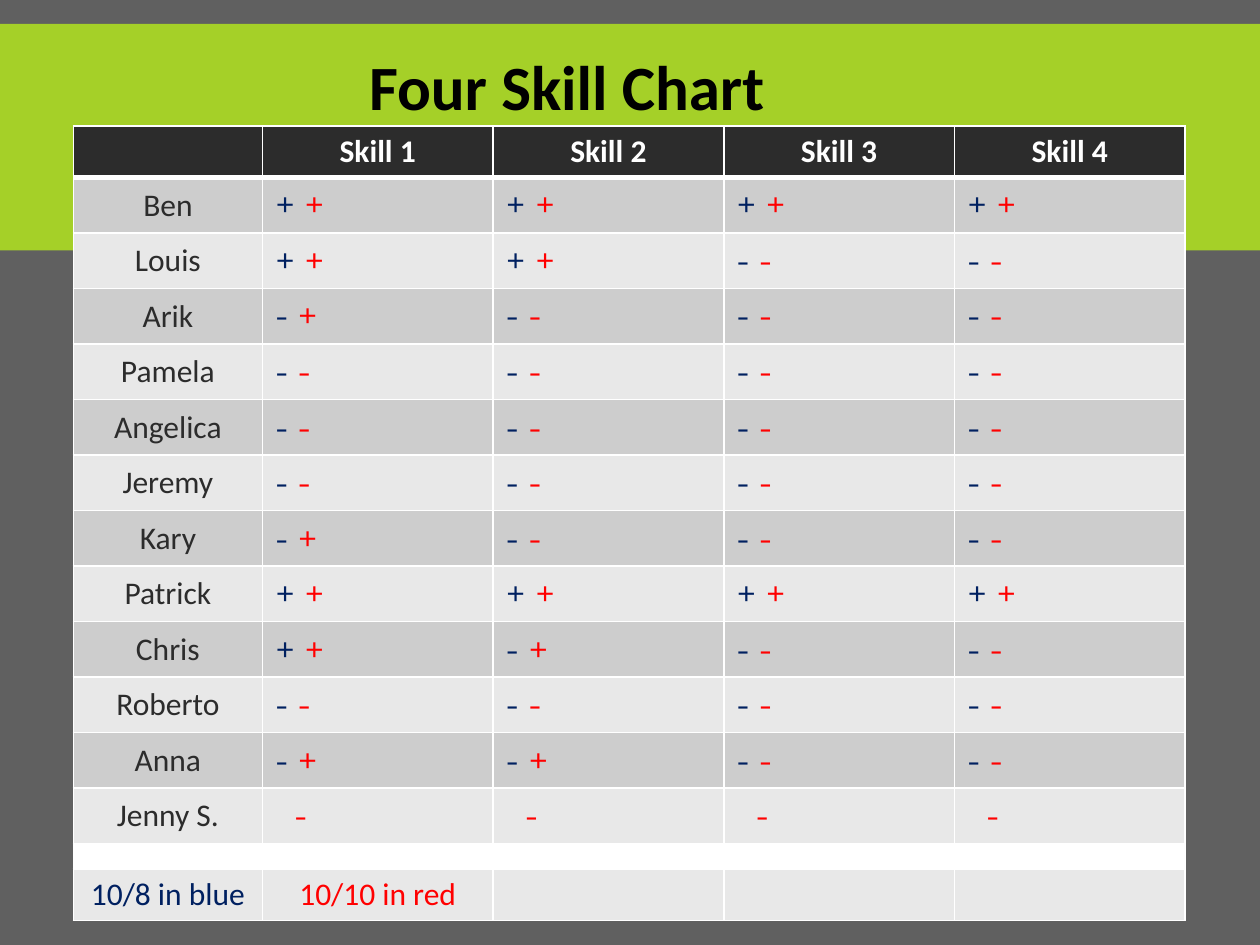
from dataclasses import dataclass
from typing import Any

from lxml.etree import SubElement
from pptx import Presentation
from pptx.dml.color import RGBColor
from pptx.enum.shapes import MSO_SHAPE
from pptx.enum.text import MSO_ANCHOR, MSO_AUTO_SIZE, PP_ALIGN
from pptx.oxml.ns import qn
from pptx.util import Cm, Pt


@dataclass(frozen=True)
class Theme:
    background: str = "606060"
    band: str = "A5D028"
    dark: str = "2C2C2C"
    stripes: tuple[str, str] = ("CDCDCD", "E8E8E8")
    white: str = "FFFFFF"
    black: str = "000000"
    blue: str = "002060"
    red: str = "FF0000"
    text_font: str = "Calibri"
    mark_font: str = "Montserrat"
    title_size: int = 36
    text_size: int = 18
    mark_size: int = 20
    spacer_size: int = 8
    line: float = 1
    header_line: float = 3


@dataclass(frozen=True)
class Student:
    """Each skill holds the blue mark followed by the red one; a lone mark is red."""
    name: str
    skills: tuple[str, ...]


THEME = Theme()
HEADINGS = ["Skill 1", "Skill 2", "Skill 3", "Skill 4"]
ALL_PLUS = ("++",) * 4
ALL_MINUS = ("--",) * 4
FIRST_GAINED = ("-+", "--", "--", "--")
STUDENTS = [
    Student("Ben", ALL_PLUS),
    Student("Louis", ("++", "++", "--", "--")),
    Student("Arik", FIRST_GAINED),
    Student("Pamela", ALL_MINUS),
    Student("Angelica", ALL_MINUS),
    Student("Jeremy", ALL_MINUS),
    Student("Kary", FIRST_GAINED),
    Student("Patrick", ALL_PLUS),
    Student("Chris", ("++", "-+", "--", "--")),
    Student("Roberto", ALL_MINUS),
    Student("Anna", ("-+", "-+", "--", "--")),
    Student("Jenny S.", ("-",) * 4),
]
LEGEND = [("10/8 in blue", THEME.blue), ("10/10 in red", THEME.red)]

COLUMN_WIDTHS = [Cm(3.81)] + [Cm(4.65)] * len(HEADINGS)
ROW_HEIGHTS = [Cm(1.04)] + [Cm(1.09)] * len(STUDENTS) + [Cm(0.51), Cm(1.04)]
SPACER_ROW = len(STUDENTS) + 1
LEGEND_ROW = SPACER_ROW + 1
LONE_MARK_INDENT = Cm(0.64)


def add_run(paragraph: Any, text: str, color: str, size: int = THEME.text_size,
            font: str = THEME.text_font, bold: bool = False) -> None:
    run = paragraph.add_run()
    run.text = text
    for name, value in {"name": font, "size": Pt(size), "bold": bold}.items():
        setattr(run.font, name, value)
    run.font.color.rgb = RGBColor.from_string(color)


def style_cell(cell: Any, fill: str, top: float, bottom: float) -> None:
    properties = cell._tc.get_or_add_tcPr()
    widths = {"lnL": THEME.line, "lnR": THEME.line, "lnT": top, "lnB": bottom}
    for tag, width in widths.items():
        border = SubElement(properties, qn(f"a:{tag}"), w=str(Pt(width)))
        border_fill = SubElement(border, qn("a:solidFill"))
        SubElement(border_fill, qn("a:srgbClr"), val=THEME.white)
    cell.fill.solid()
    cell.fill.fore_color.rgb = RGBColor.from_string(fill)
    cell.vertical_anchor = MSO_ANCHOR.MIDDLE


def write_label(cell: Any, text: str, color: str, bold: bool = False) -> None:
    paragraph = cell.text_frame.paragraphs[0]
    paragraph.alignment = PP_ALIGN.CENTER
    add_run(paragraph, text, color, bold=bold)


def write_marks(cell: Any, marks: str) -> None:
    paragraph = cell.text_frame.paragraphs[0]
    blue_mark, red_mark = marks[:-1], marks[-1]
    if blue_mark:
        add_run(paragraph, blue_mark, THEME.blue, THEME.mark_size, THEME.mark_font)
        red_mark = f" {red_mark}"
    else:
        cell.margin_left = LONE_MARK_INDENT
    add_run(paragraph, red_mark, THEME.red, THEME.mark_size, THEME.mark_font)


def flatten_cell(cell: Any) -> None:
    """Let an empty cell shrink to the height of the spacer row."""
    cell.margin_top = cell.margin_bottom = 0
    paragraph = cell.text_frame.paragraphs[0]
    SubElement(paragraph._p, qn("a:endParaRPr"), sz=str(THEME.spacer_size * 100))


def row_fill(row: int) -> str:
    if row == 0:
        return THEME.dark
    if row == SPACER_ROW:
        return THEME.white
    return THEME.stripes[(row - 1) % 2]


def add_skill_table(slide: Any) -> None:
    table = slide.shapes.add_table(
        len(ROW_HEIGHTS), len(COLUMN_WIDTHS), Cm(1.48), Cm(2.54),
        sum(COLUMN_WIDTHS), sum(ROW_HEIGHTS)).table
    table.horz_banding = False
    for column, width in zip(table.columns, COLUMN_WIDTHS):
        column.width = width
    for index, (row, height) in enumerate(zip(table.rows, ROW_HEIGHTS)):
        row.height = height
        top = THEME.header_line if index == 1 else THEME.line
        bottom = THEME.header_line if index == 0 else THEME.line
        for cell in row.cells:
            style_cell(cell, row_fill(index), top, bottom)
            if index == SPACER_ROW:
                flatten_cell(cell)

    for column, heading in enumerate(HEADINGS, start=1):
        write_label(table.cell(0, column), heading, THEME.white, bold=True)
    for row, student in enumerate(STUDENTS, start=1):
        write_label(table.cell(row, 0), student.name, THEME.dark)
        for column, marks in enumerate(student.skills, start=1):
            write_marks(table.cell(row, column), marks)
    for column, (text, color) in enumerate(LEGEND):
        write_label(table.cell(LEGEND_ROW, column), text, color)


def add_band(slide: Any, width: int) -> None:
    band = slide.shapes.add_shape(MSO_SHAPE.RECTANGLE, 0, Cm(0.48), width, Cm(4.57))
    band.shadow.inherit = False
    band.fill.solid()
    band.fill.fore_color.rgb = RGBColor.from_string(THEME.band)
    band.line.fill.background()


def add_title(slide: Any) -> None:
    frame = slide.shapes.add_textbox(Cm(7.19), Cm(0.84), Cm(11.23), Cm(1.8)).text_frame
    for name, value in {"word_wrap": True,
                        "auto_size": MSO_AUTO_SIZE.SHAPE_TO_FIT_TEXT}.items():
        setattr(frame, name, value)
    add_run(frame.paragraphs[0], "Four Skill Chart", THEME.black, THEME.title_size, bold=True)


def main() -> None:
    presentation = Presentation()
    presentation.slide_width, presentation.slide_height = Cm(25.4), Cm(19.05)
    slide = presentation.slides.add_slide(presentation.slide_layouts[6])
    slide.background.fill.solid()
    slide.background.fill.fore_color.rgb = RGBColor.from_string(THEME.background)
    add_band(slide, presentation.slide_width)
    add_skill_table(slide)
    add_title(slide)
    presentation.save("out.pptx")


if __name__ == "__main__":
    main()
